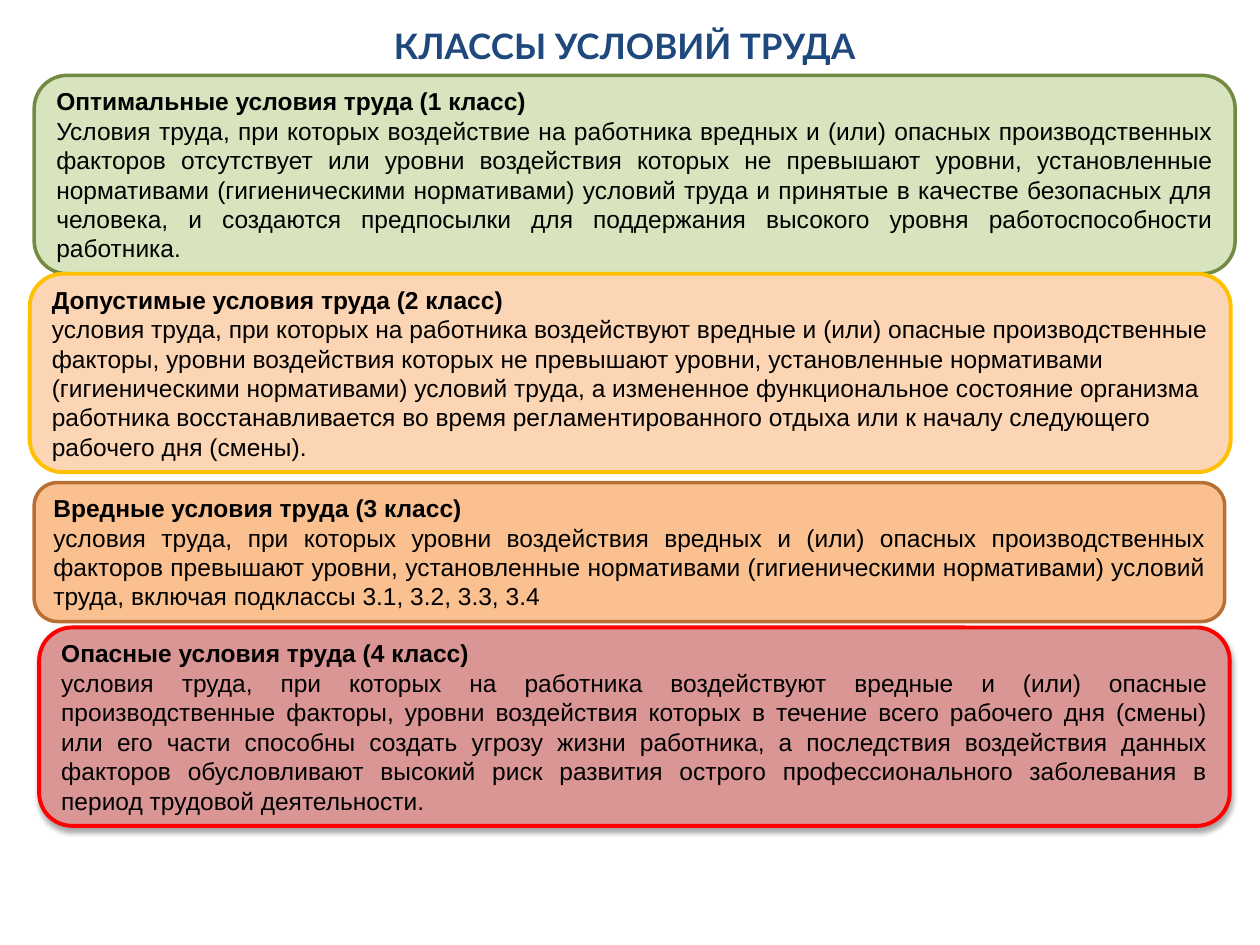
from lxml import etree
from pptx import Presentation
from pptx.dml.color import RGBColor
from pptx.enum import shapes, text
from pptx.oxml import ns
from pptx.util import Cm, Pt

TITLE = "КЛАССЫ УСЛОВИЙ ТРУДА"
LEFT, JUSTIFY = text.PP_ALIGN.LEFT, text.PP_ALIGN.JUSTIFY

# heading, description, alignment, (left, top, width, height) in cm, fill, line, line width, shadow
CLASSES = [
    ("Оптимальные условия труда (1 класс)",
     "Условия труда, при которых воздействие на работника вредных и (или) опасных "
     "производственных факторов отсутствует или уровни воздействия которых не превышают "
     "уровни, установленные нормативами (гигиеническими нормативами) условий труда и "
     "принятые в качестве безопасных для человека, и создаются предпосылки для "
     "поддержания высокого уровня работоспособности работника.",
     JUSTIFY, (0.69, 1.52, 24.21, 4), "D7E4BD", "738A42", 2, False),
    ("Допустимые условия труда (2 класс)",
     "условия труда, при которых на работника воздействуют вредные и (или) опасные "
     "производственные факторы, уровни воздействия которых не превышают уровни, "
     "установленные нормативами (гигиеническими нормативами) условий труда, а измененное "
     "функциональное состояние организма работника восстанавливается во время "
     "регламентированного отдыха или к началу следующего рабочего дня (смены).",
     LEFT, (0.6, 5.52, 24.21, 4), "FCD5B5", "FFC000", 2.25, False),
    ("Вредные условия труда (3 класс)",
     "условия труда, при которых уровни воздействия вредных и (или) опасных "
     "производственных факторов превышают уровни, установленные нормативами "
     "(гигиеническими нормативами) условий труда, включая подклассы 3.1, 3.2, 3.3, 3.4",
     JUSTIFY, (0.69, 9.73, 24, 2.8), "FAC090", "B76F34", 2, False),
    ("Опасные условия труда (4 класс)",
     "условия труда, при которых на работника воздействуют вредные и (или) опасные "
     "производственные факторы, уровни воздействия которых в течение всего рабочего дня "
     "(смены) или его части способны создать угрозу жизни работника, а последствия "
     "воздействия данных факторов обусловливают высокий риск развития острого "
     "профессионального заболевания в период трудовой деятельности.",
     JUSTIFY, (0.79, 12.65, 24, 4), "D99694", "FF0000", 2.25, True),
]


def paint(color_format, value):
    color_format.rgb = RGBColor.from_string(value)


def add_run(p, content, font, size, color, bold):
    r = p.add_run()
    r.text = content
    r.font.name, r.font.size, r.font.bold = font, Pt(size), bold
    paint(r.font.color, color)


def add_shadow(sp):
    effects = sp._element.spPr.find(ns.qn("a:effectLst"))
    shadow = etree.SubElement(effects, ns.qn("a:outerShdw"), blurRad=str(Pt(3.1)),
                              dist=str(Pt(1.8)), dir="5400000", rotWithShape="0")
    color = etree.SubElement(shadow, ns.qn("a:srgbClr"), val="000000")
    etree.SubElement(color, ns.qn("a:alpha"), val="35000")


def add_class(s, heading, description, align, box, fill, line, width, shadow):
    sp = s.shapes.add_shape(shapes.MSO_SHAPE.ROUNDED_RECTANGLE, *map(Cm, box))
    sp.fill.solid()
    paint(sp.fill.fore_color, fill)
    paint(sp.line.color, line)
    sp.line.width = Pt(width)
    sp.shadow.inherit = False
    if shadow:
        add_shadow(sp)
    tf = sp.text_frame
    tf.word_wrap = True
    tf.vertical_anchor = text.MSO_ANCHOR.MIDDLE
    p = tf.paragraphs[0]
    p.alignment = LEFT
    add_run(p, heading, "Arial", 14, "000000", True)
    p = tf.add_paragraph()
    p.alignment = align
    add_run(p, description, "Arial", 14, "000000", False)


def add_title(s):
    sp = s.shapes.title
    sp.left, sp.top, sp.width, sp.height = Cm(1.09), Cm(0.33), Cm(23.01), Cm(1.19)
    tf = sp.text_frame
    tf.margin_left = tf.margin_right = tf.margin_top = tf.margin_bottom = 0
    tf.word_wrap = False
    tf.vertical_anchor = text.MSO_ANCHOR.MIDDLE
    p = tf.paragraphs[0]
    p.alignment = text.PP_ALIGN.CENTER
    add_run(p, TITLE, "Lato", 20, "1F497D", True)


def main():
    prs = Presentation()
    prs.slide_width, prs.slide_height = Cm(25.4), Cm(19.05)
    s = prs.slides.add_slide(prs.slide_layouts.get_by_name("Title Only"))
    add_title(s)
    for labour_class in CLASSES:
        add_class(s, *labour_class)
    prs.save("out.pptx")


if __name__ == "__main__":
    main()
